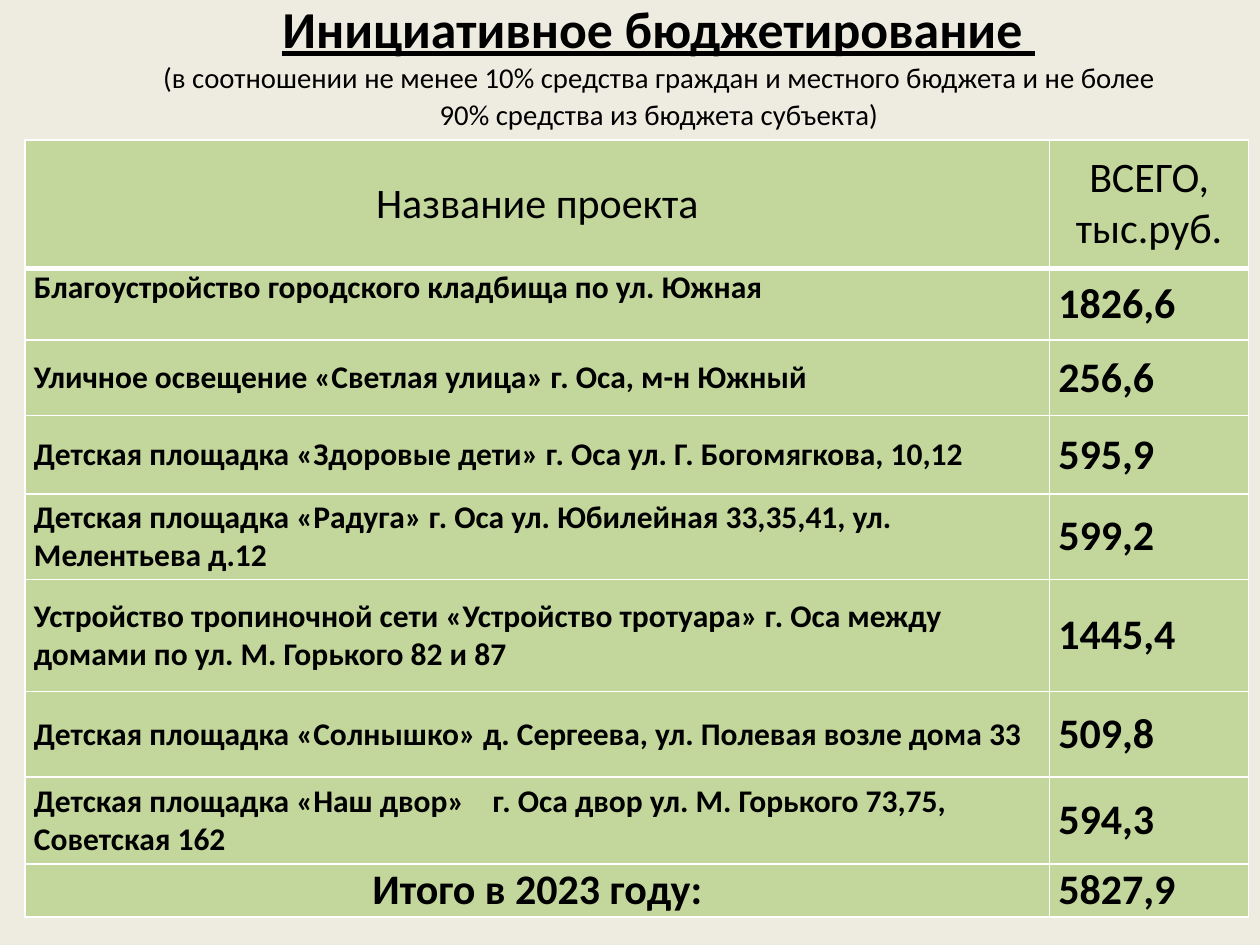
"""Build the slide on participatory budgeting, on a grid of 100 columns by 75 rows."""
from dataclasses import dataclass

from lxml.etree import SubElement
from pptx import Presentation
from pptx.dml.color import RGBColor
from pptx.enum.text import MSO_ANCHOR, MSO_AUTO_SIZE, PP_ALIGN
from pptx.oxml.ns import qn
from pptx.util import Inches, Pt

TINT = {"back": "EEECE1", "cell": "C3D69B", "line": "FFFFFF", "ink": "000000"}
COLS = (81.3, 15.8)
TAB = 36.4


@dataclass
class Row:
    name: str
    sum: str
    tall: float
    size: int = 18
    bold: bool = True
    mid: bool = False
    top: bool = False


ROWS = (
    Row("Название проекта", "ВСЕГО, тыс.руб.", 10.2, 24, bold=False, mid=True),
    Row("Благоустройство городского кладбища по ул. Южная", "1826,6", 5.7, top=True),
    Row("Уличное освещение «Светлая улица» г. Оса, м-н Южный", "256,6", 6),
    Row("Детская площадка «Здоровые дети» г. Оса ул. Г. Богомягкова, 10,12", "595,9", 6.2),
    Row("Детская площадка «Радуга» г. Оса ул. Юбилейная 33,35,41, ул. Мелентьева д.12", "599,2", 6.8),
    Row("Устройство тропиночной сети «Устройство тротуара» г. Оса между домами по ул. М. Горького 82 и 87",
        "1445,4", 8.9),
    Row("Детская площадка «Солнышко» д. Сергеева, ул. Полевая возле дома 33", "509,8", 6.8),
    Row("Детская площадка «Наш двор»\tг. Оса двор ул. М. Горького 73,75, Советская 162", "594,3", 6.9),
    Row("Итого в 2023 году:", "5827,9", 4.2, 24, mid=True),
)


def grid(steps: float) -> int:
    """Turn grid steps into a length."""
    return Inches(steps / 10)


def style(para, text: str, size: float, bold: bool, mid: bool) -> None:
    """Write a paragraph in one font."""
    para.text = text
    para.alignment = PP_ALIGN.CENTER if mid else PP_ALIGN.LEFT
    font = para.font
    font.name, font.size, font.bold = "Calibri", Pt(size), bold
    font.color.rgb = RGBColor.from_string(TINT["ink"])


def add_tab(para) -> None:
    """Set the tab stop of a paragraph."""
    stops = para._p.get_or_add_pPr()
    tabs = SubElement(stops, qn("a:tabLst"))
    SubElement(tabs, qn("a:tab"), pos=str(grid(TAB)), algn="l")
    stops.insert(0, tabs)


def frame(cell, top: float, base: float) -> None:
    """Draw the four borders of a cell, then its fill."""
    props = cell._tc.get_or_add_tcPr()
    for side, width in (("L", 1), ("R", 1), ("T", top), ("B", base)):
        line = SubElement(props, qn(f"a:ln{side}"), w=str(Pt(width)))
        fill = SubElement(line, qn("a:solidFill"))
        SubElement(fill, qn("a:srgbClr"), val=TINT["line"])
    cell.fill.solid()
    cell.fill.fore_color.rgb = RGBColor.from_string(TINT["cell"])


def add_head(slide) -> None:
    """Add the title and the note below it."""
    box = slide.shapes.add_textbox(grid(9.8), grid(1.3), grid(85), grid(9.8)).text_frame
    box.word_wrap = True
    box.auto_size = MSO_AUTO_SIZE.SHAPE_TO_FIT_TEXT
    title, note = box.paragraphs[0], box.add_paragraph()
    style(title, "Инициативное бюджетирование ", 29.6, True, True)
    style(note, "(в соотношении не менее 10% средства граждан и местного бюджета "
          "и не более 90% средства из бюджета субъекта)", 16.4, False, True)
    title.font.underline = True
    for para in (title, note):
        para.line_spacing = Pt(20.6)


def add_rows(slide) -> None:
    """Add the table of projects."""
    table = slide.shapes.add_table(len(ROWS), len(COLS), grid(2), grid(11.1), grid(sum(COLS)),
                                   grid(sum(row.tall for row in ROWS))).table
    table.first_row = table.horz_banding = False
    for col, width in zip(table.columns, COLS):
        col.width = grid(width)
    for rank, row in enumerate(ROWS):
        table.rows[rank].height = grid(row.tall)
        parts = ((row.name, row.size, row.mid), (row.sum, 24, rank == 0))
        for cell, (text, size, mid) in zip(table.rows[rank].cells, parts):
            cell.margin_left = cell.margin_right = Inches(0.07)
            cell.margin_top = cell.margin_bottom = 0
            cell.vertical_anchor = MSO_ANCHOR.MIDDLE
            para = cell.text_frame.paragraphs[0]
            style(para, text, size, row.bold, mid)
            if "\t" in text:
                add_tab(para)
            frame(cell, 3 if rank == 1 else 1, 3 if rank == 0 else 1)
        if row.top:
            table.cell(rank, 0).vertical_anchor = MSO_ANCHOR.TOP


def main() -> None:
    """Build and save the slide."""
    deck = Presentation()
    deck.slide_width, deck.slide_height = grid(100), grid(75)
    slide = deck.slides.add_slide(deck.slide_layouts[6])
    slide.background.fill.solid()
    slide.background.fill.fore_color.rgb = RGBColor.from_string(TINT["back"])
    add_head(slide)
    add_rows(slide)
    deck.save("out.pptx")


if __name__ == "__main__":
    main()
